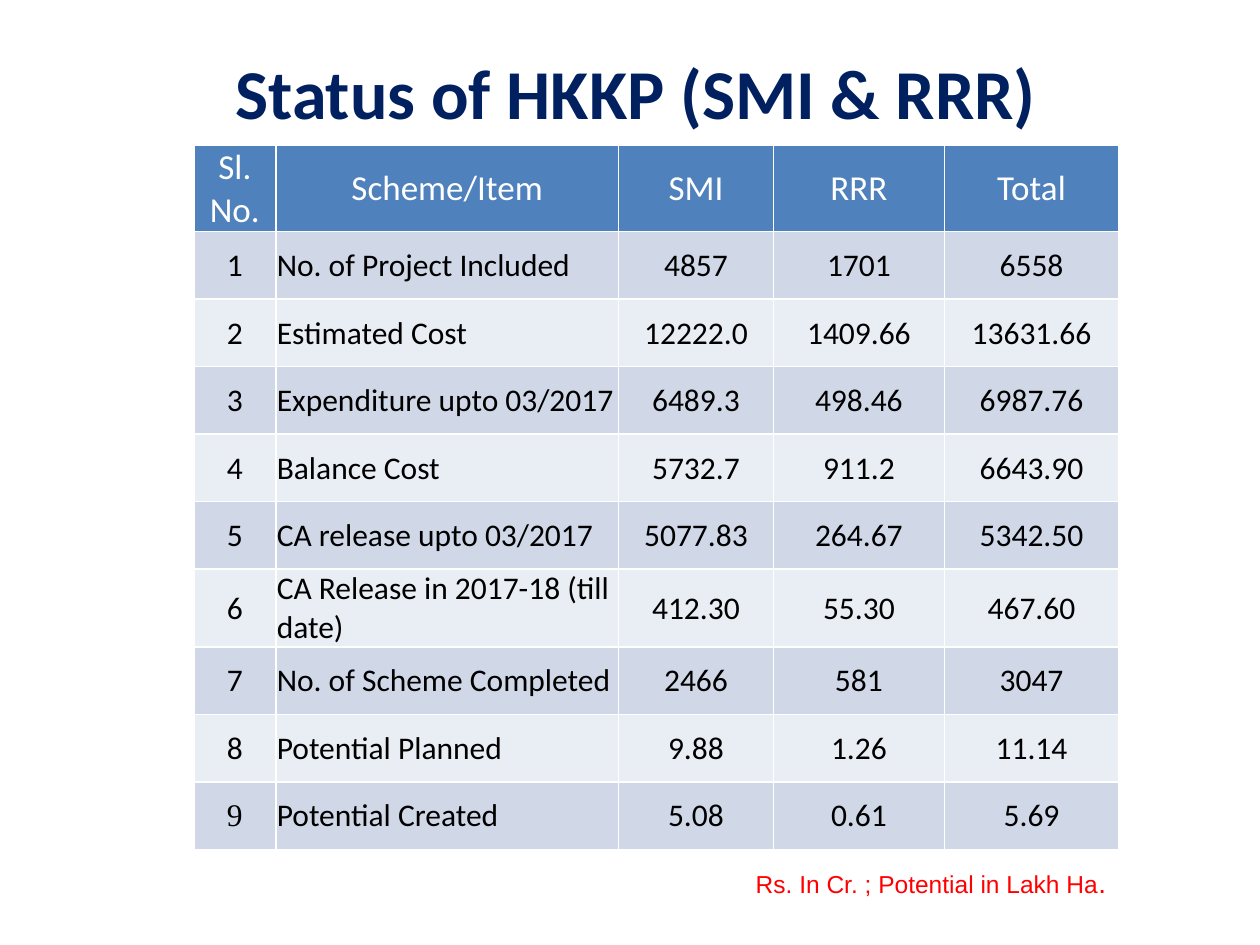
from pptx import Presentation
from pptx.dml.color import RGBColor
from pptx.enum.text import MSO_ANCHOR as ANCHOR, MSO_AUTO_SIZE as AUTO_SIZE, PP_ALIGN as ALIGN
from pptx.util import Cm, Pt


def rgb(value):
    return RGBColor.from_string(value)


def add_text(tf, text, size=18, color="000000", font="Calibri", bold=False, align=ALIGN.CENTER):
    """Append a formatted run to the first paragraph of a text frame."""
    p = tf.paragraphs[0]
    p.alignment = align
    r = p.add_run()
    r.text = text
    r.font.size = Pt(size)
    r.font.name = font
    r.font.bold = bold
    r.font.color.rgb = rgb(color)


HEADERS = ["Sl. No.", "Scheme/Item", "SMI", "RRR", "Total"]
ITEMS = [
    ("No. of Project Included", "4857", "1701", "6558"),
    ("Estimated Cost", "12222.0", "1409.66", "13631.66"),
    ("Expenditure upto 03/2017", "6489.3", "498.46", "6987.76"),
    ("Balance Cost", "5732.7", "911.2", "6643.90"),
    ("CA release upto 03/2017", "5077.83", "264.67", "5342.50"),
    ("CA Release in 2017-18 (till date)", "412.30", "55.30", "467.60"),
    ("No. of Scheme Completed", "2466", "581", "3047"),
    ("Potential Planned", "9.88", "1.26", "11.14"),
    ("Potential Created", "5.08", "0.61", "5.69"),
]
COL_WIDTHS = [1.65, 6.91, 3.12, 3.45, 3.51]
ROW_HEIGHT = 1.36

prs = Presentation()
prs.slide_width, prs.slide_height = Cm(25.4), Cm(19.05)
s = prs.slides.add_slide(prs.slide_layouts[5])

# Title
title = s.shapes.title
title.left, title.top, title.width, title.height = Cm(4.42), Cm(0.91), Cm(16.79), Cm(1.88)
tf = title.text_frame
tf.vertical_anchor = ANCHOR.MIDDLE
add_text(tf, "Status of HKKP (SMI & RRR)", size=40, color="002060", bold=True)

# Status table; its default style draws the white cell borders
rows = [HEADERS] + [(str(n), *item) for n, item in enumerate(ITEMS, 1)]
table = s.shapes.add_table(len(rows), len(HEADERS), Cm(3.91), Cm(2.92),
                           Cm(sum(COL_WIDTHS)), Cm(ROW_HEIGHT * len(rows))).table
for column, width in zip(table.columns, COL_WIDTHS):
    column.width = Cm(width)

for i, row in enumerate(rows):
    table.rows[i].height = Cm(ROW_HEIGHT)
    is_header = i == 0
    fill = "4F81BD" if is_header else "D0D8E8" if i % 2 else "E9EDF4"
    for j, text in enumerate(row):
        cell = table.cell(i, j)
        cell.fill.solid()
        cell.fill.fore_color.rgb = rgb(fill)
        cell.vertical_anchor = ANCHOR.MIDDLE
        cell.margin_left = cell.margin_top = cell.margin_right = Cm(0.02)
        cell.margin_bottom = 0
        add_text(cell.text_frame, text,
                 size=20 if is_header else 18,
                 color="FFFFFF" if is_header else "000000",
                 font="Times New Roman" if (i, j) == (9, 0) else "Calibri",
                 align=ALIGN.LEFT if j == 1 and not is_header else ALIGN.CENTER)

# Units note
note = s.shapes.add_textbox(Cm(11.3), Cm(17.32), Cm(11.25), Cm(0.94))
tf = note.text_frame
tf.word_wrap = True
tf.auto_size = AUTO_SIZE.SHAPE_TO_FIT_TEXT
for text, size in [("Rs. In Cr. ; Potential in Lakh Ha", 14), (".", 16)]:
    add_text(tf, text, size=size, color="FF0000", font="Arial", align=ALIGN.RIGHT)

prs.save("out.pptx")
